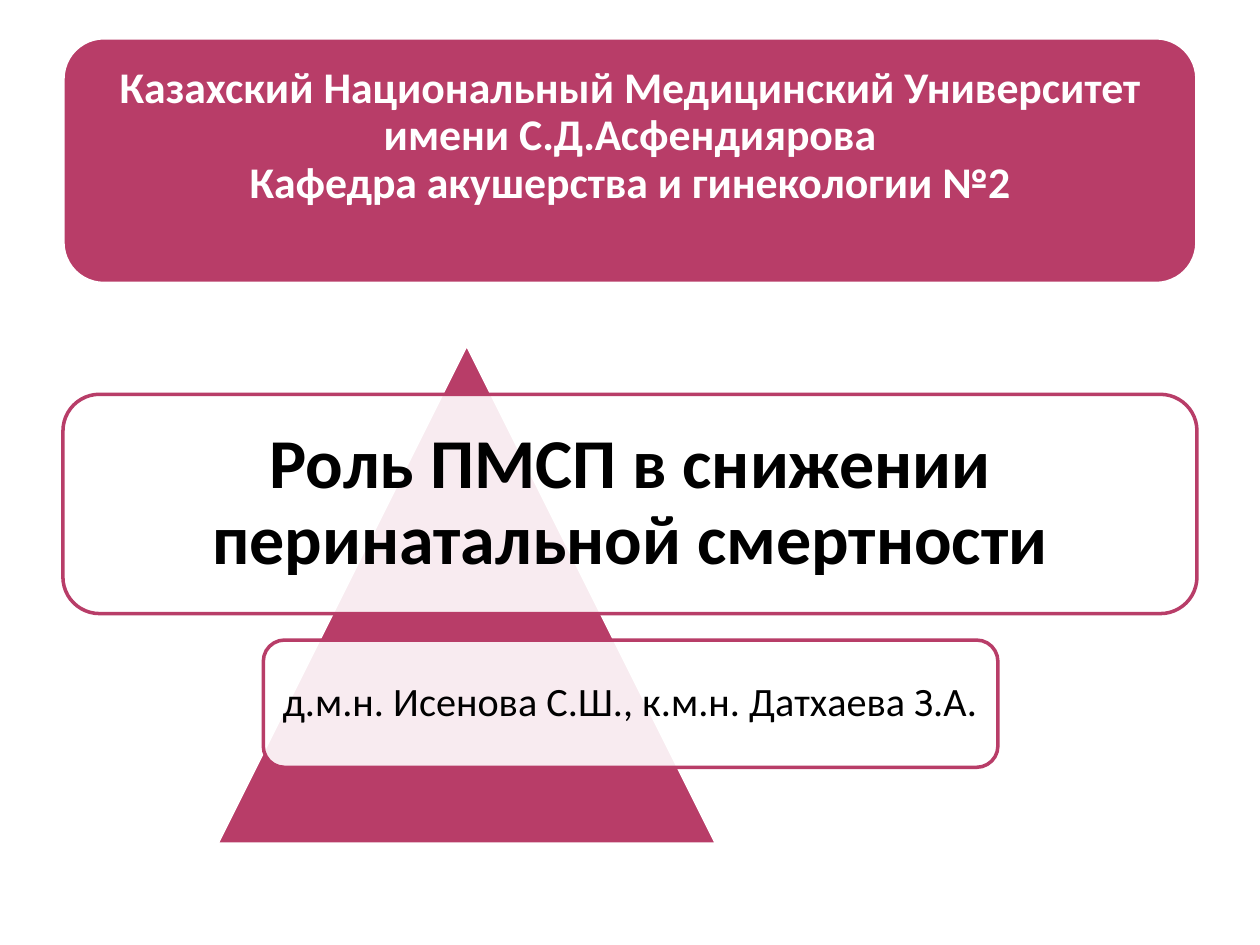
"""Build the title slide of a lecture on perinatal mortality."""
import pptx
import pptx.dml.color
import pptx.enum.shapes
import pptx.enum.text
import pptx.oxml
import pptx.oxml.ns
import pptx.util

Inches = pptx.util.Inches
Pt = pptx.util.Pt
SHAPES = pptx.enum.shapes.MSO_SHAPE

COLORS = {"accent": "B83D68", "white": "FFFFFF", "black": "000000"}


def rgb(name):
    return pptx.dml.color.RGBColor.from_string(COLORS[name])


def add_figure(page, kind, left, top, width, height, fill, line):
    figure = page.shapes.add_shape(
        kind, Inches(left), Inches(top), Inches(width), Inches(height))
    figure.shadow.inherit = False
    figure.fill.solid()
    figure.fill.fore_color.rgb = rgb(fill)
    figure.line.color.rgb = rgb(line)
    figure.line.width = Pt(2)
    return figure


def set_opacity(figure, percent):
    color = figure.fill._xPr.find(".//" + pptx.oxml.ns.qn("a:srgbClr"))
    color.append(pptx.oxml.parse_xml(
        f'<a:alpha {pptx.oxml.ns.nsdecls("a")} val="{percent * 1000}"/>'))


def write_text(figure, text, size, color, bold=False, inset=0.1, bottom=None):
    frame = figure.text_frame
    frame.word_wrap = True
    frame.vertical_anchor = pptx.enum.text.MSO_ANCHOR.MIDDLE
    frame.margin_left = frame.margin_right = frame.margin_top = Inches(inset)
    frame.margin_bottom = Inches(bottom or inset)
    para = frame.paragraphs[0]
    para.text = text
    para.alignment = pptx.enum.text.PP_ALIGN.CENTER
    para.line_spacing = 0.9
    for span in para.runs:
        span.font.name = "Calibri"
        span.font.size = Pt(size)
        span.font.bold = bold
        span.font.color.rgb = rgb(color)


def add_card(page, left, top, width, height):
    card = add_figure(page, SHAPES.ROUNDED_RECTANGLE, left, top, width, height,
                      "white", "accent")
    set_opacity(card, 90)
    return card


def main():
    deck = pptx.Presentation()
    deck.slide_width, deck.slide_height = Inches(10), Inches(7.5)
    page = deck.slides.add_slide(deck.slide_layouts[6])

    header = add_figure(page, SHAPES.ROUNDED_RECTANGLE, 0.5, 0.3, 9, 1.95,
                        "accent", "white")
    write_text(header,
               "Казахский Национальный Медицинский Университет "
               "имени С.Д.Асфендиярова\vКафедра акушерства и гинекологии №2",
               25, "white", bold=True, bottom=0.48)

    add_figure(page, SHAPES.ISOSCELES_TRIANGLE, 1.72, 2.73, 3.97, 3.97,
               "accent", "white")

    title = add_card(page, 0.5, 3.13, 9, 1.74)
    write_text(title, "Роль ПМСП в снижении перинатальной смертности",
               40, "black", bold=True, inset=0.17)

    authors = add_card(page, 2.09, 5.08, 5.83, 1.01)
    write_text(authors, "д.м.н. Исенова С.Ш., к.м.н. Датхаева З.А.",
               23, "black")

    deck.save("out.pptx")


if __name__ == "__main__":
    main()
